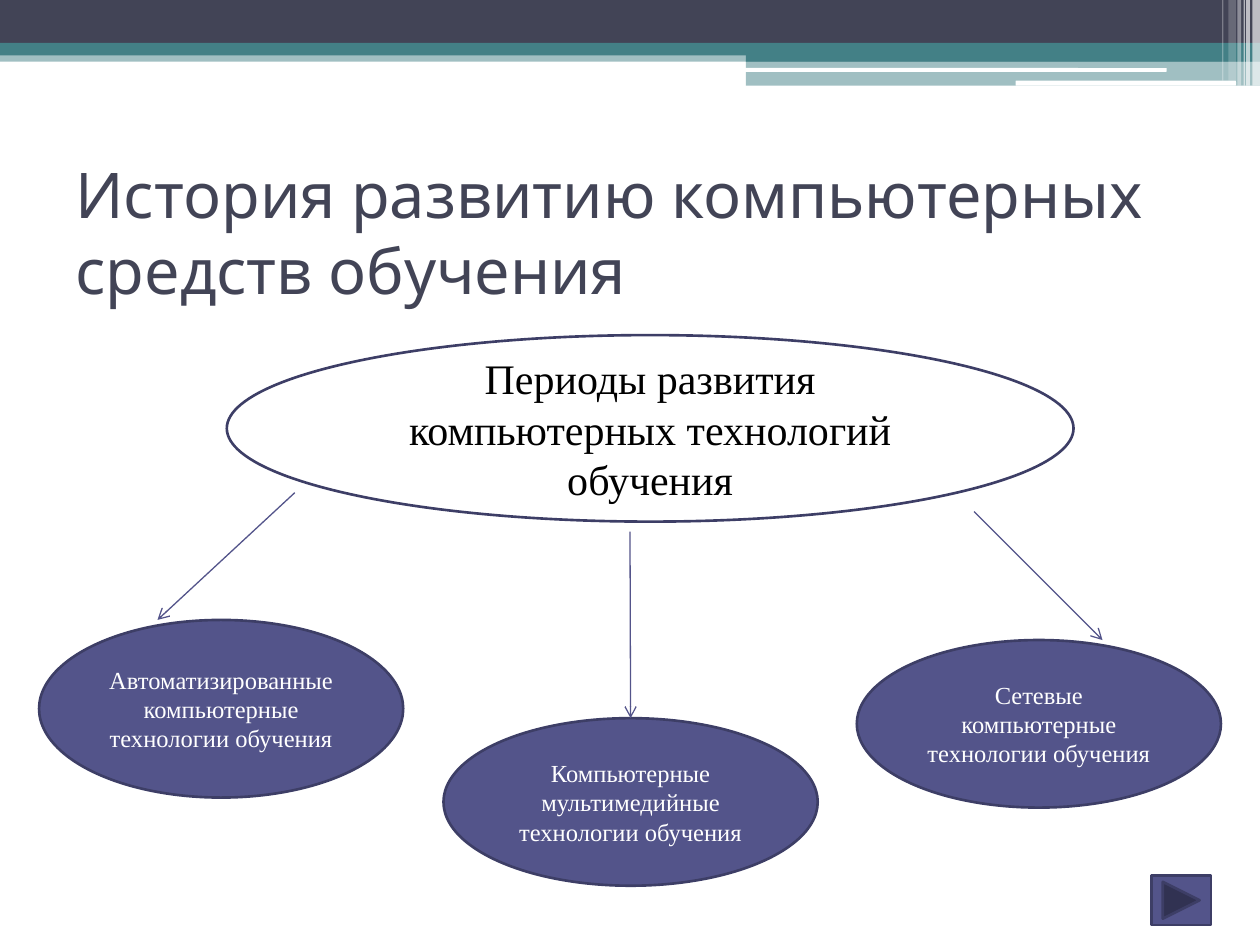
from dataclasses import dataclass
from typing import Optional

from lxml import etree
from pptx import Presentation
from pptx import util as u
from pptx.dml.color import RGBColor
from pptx.enum import shapes, text
from pptx.oxml.ns import qn

GEO = shapes.MSO_SHAPE


@dataclass(frozen=True)
class Theme:
    dark: str = "424456"
    teal: str = "438086"
    accent: str = "53548A"
    outline: str = "3D3E66"
    white: str = "FFFFFF"
    black: str = "000000"
    heading_font: str = "Karla"
    body_font: str = "Times New Roman"
    title_size: int = 36
    topic_size: int = 24
    period_size: int = 14
    outline_width: float = 1.5
    arrow_width: float = 0.75


@dataclass(frozen=True)
class Box:
    left: float
    top: float
    width: float
    height: float

    def emu(self) -> tuple:
        return tuple(u.Inches(v) for v in (self.left, self.top, self.width, self.height))


@dataclass(frozen=True)
class Band:
    box: Box
    color: str
    alpha: int = 100
    geometry: GEO = GEO.RECTANGLE


@dataclass(frozen=True)
class Period:
    label: str
    box: Box
    arrow_from: tuple
    arrow_to: Optional[tuple] = None  # None: the top of the ellipse


T = Theme()

BANDS = [
    Band(Box(0, 0.4, 10, 0.09), T.teal, 50),
    Band(Box(0, 0, 10, 0.34), T.dark),
    Band(Box(0, 0.34, 10, 0.1), T.teal),
    Band(Box(5.92, 0.39, 4.08, 0.1), T.teal),
    Band(Box(5.92, 0.48, 4.08, 0.2), T.teal, 50),
    Band(Box(5.91, 0.54, 3.35, 0.03), T.white, geometry=GEO.ROUNDED_RECTANGLE),
    Band(Box(8.06, 0.64, 1.75, 0.04), T.white, geometry=GEO.ROUNDED_RECTANGLE),
] + [
    Band(Box(left, 0, width, height), T.white, alpha)
    for left, width, height, alpha in [
        (9.94, 0.06, 0.68, 65),
        (9.89, 0.03, 0.68, 65),
        (9.87, 0.01, 0.68, 60),
        (9.82, 0.03, 0.68, 40),
        (9.75, 0.06, 0.64, 20),
        (9.7, 0.01, 0.64, 30),
    ]
]

PERIODS = [
    Period("Автоматизированные компьютерные технологии обучения",
           Box(0.31, 4.92, 2.89, 1.41), (2.34, 3.91), (1.25, 4.92)),
    Period("Компьютерные мультимедийные технологии обучения",
           Box(3.52, 5.7, 2.97, 1.33), (5, 4.22)),
    Period("Сетевые компьютерные технологии обучения",
           Box(6.8, 5.08, 2.89, 1.33), (7.73, 4.06), (8.75, 5.08)),
]


def write(tf, content: str, *, size: int, color: str, font: str = T.body_font,
          align=text.PP_ALIGN.CENTER) -> None:
    tf.word_wrap = True
    tf.vertical_anchor = text.MSO_ANCHOR.MIDDLE
    p = tf.paragraphs[0]
    p.alignment = align
    r = p.add_run()
    r.text = content
    r.font.size = u.Pt(size)
    r.font.name = font
    r.font.color.rgb = RGBColor.from_string(color)


def add_shape(s, geometry: GEO, box: Box, *, fill: Optional[str] = None,
              alpha: int = 100, line: Optional[str] = None):
    sp = s.shapes.add_shape(geometry, *box.emu())
    sp.shadow.inherit = False
    if fill:
        sp.fill.solid()
        sp.fill.fore_color.rgb = RGBColor.from_string(fill)
        if alpha < 100:
            color = sp.fill._xPr.find(f".//{qn('a:srgbClr')}")
            etree.SubElement(color, qn("a:alpha"), val=str(alpha * 1000))
    else:
        sp.fill.background()
    if line:
        sp.line.color.rgb = RGBColor.from_string(line)
        sp.line.width = u.Pt(T.outline_width)
    else:
        sp.line.fill.background()
    return sp


def add_arrow(s, start: tuple, end: Optional[tuple], target) -> None:
    """Draw an arrow to end, or joined to the top of target if end is None."""
    cx = s.shapes.add_connector(shapes.MSO_CONNECTOR.STRAIGHT,
                                *(u.Inches(v) for v in start + (end or start)))
    if end is None:
        cx.end_connect(target, 0)
    cx.line.color.rgb = RGBColor.from_string(T.accent)
    cx.line.width = u.Pt(T.arrow_width)
    etree.SubElement(cx.line._get_or_add_ln(), qn("a:tailEnd"), type="arrow")
    etree.SubElement(cx._element.spPr, qn("a:effectLst"))


def add_title(s, content: str, box: Box) -> None:
    title = s.shapes.title
    title.left, title.top, title.width, title.height = box.emu()
    write(title.text_frame, content, size=T.title_size, color=T.dark,
          font=T.heading_font, align=text.PP_ALIGN.LEFT)


def main() -> None:
    prs = Presentation()
    prs.slide_width, prs.slide_height = u.Inches(10), u.Inches(7.5)
    s = prs.slides.add_slide(prs.slide_layouts.get_by_name("Title Only"))

    for band in BANDS:
        add_shape(s, band.geometry, band.box, fill=band.color, alpha=band.alpha)
    add_title(s, "История развитию компьютерных средств обучения",
              Box(0.5, 1.25, 9, 1.17))

    topic = add_shape(s, GEO.OVAL, Box(1.8, 2.66, 6.72, 1.48), line=T.outline)
    write(topic.text_frame, "Периоды развития компьютерных технологий обучения",
          size=T.topic_size, color=T.black)

    for period in PERIODS:
        sp = add_shape(s, GEO.OVAL, period.box, fill=T.accent, line=T.outline)
        write(sp.text_frame, period.label, size=T.period_size, color=T.white)
        add_arrow(s, period.arrow_from, period.arrow_to, sp)

    add_shape(s, GEO.ACTION_BUTTON_FORWARD_OR_NEXT, Box(9.14, 6.95, 0.47, 0.39),
              fill=T.accent, line=T.outline)
    prs.save("out.pptx")


if __name__ == "__main__":
    main()
